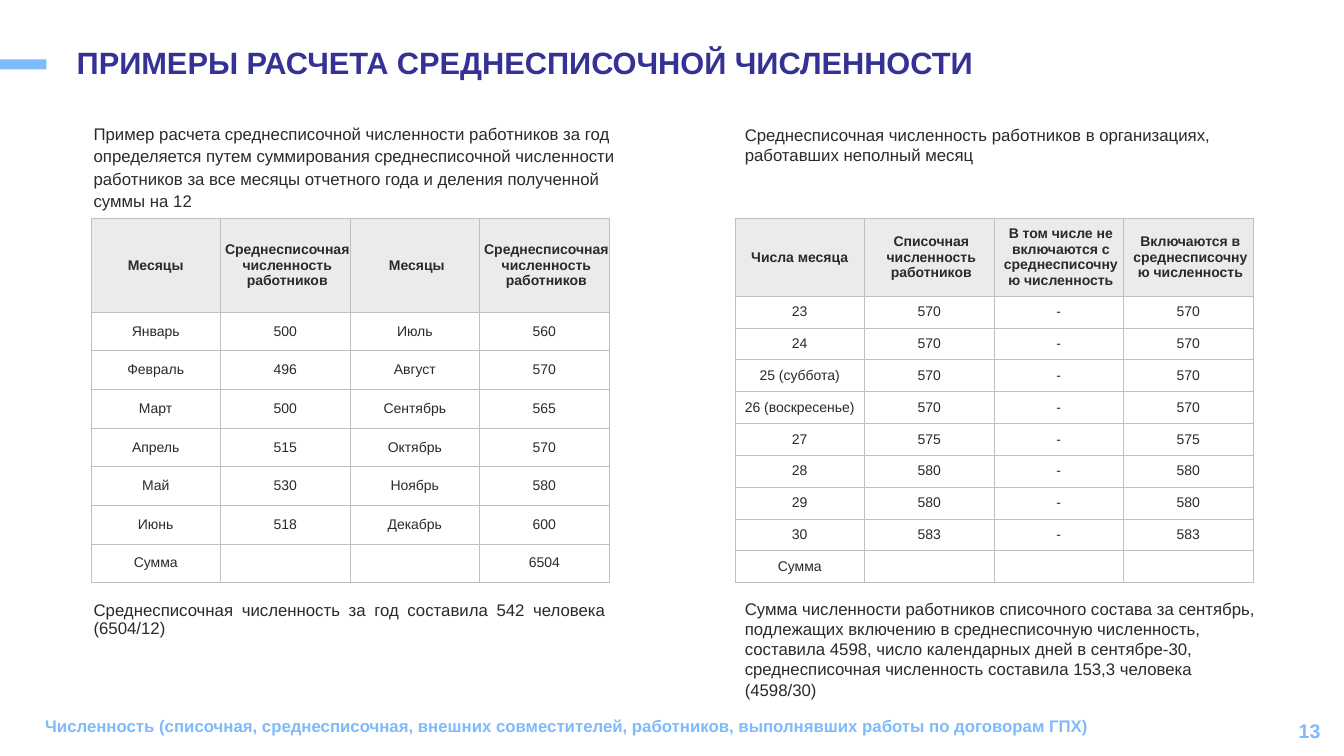
from lxml.etree import SubElement
from pptx import Presentation
from pptx.dml.color import RGBColor
from pptx.enum.shapes import MSO_SHAPE
from pptx.enum.text import MSO_ANCHOR, MSO_AUTO_SIZE, PP_ALIGN
from pptx.oxml.ns import qn
from pptx.util import Cm, Pt

COLORS = {"title": "363194", "accent": "7DBBFC", "text": "282A2E",
          "head": "EBEBEB", "body": "FFFFFF", "border": "BFBFBF"}

MONTHS = [
    ["Месяцы", "Среднесписочная численность работников"] * 2,
    ["Январь", "500", "Июль", "560"],
    ["Февраль", "496", "Август", "570"],
    ["Март", "500", "Сентябрь", "565"],
    ["Апрель", "515", "Октябрь", "570"],
    ["Май", "530", "Ноябрь", "580"],
    ["Июнь", "518", "Декабрь", "600"],
    ["Сумма", "", "", "6504"],
]
DAY_COUNTS = [("23", "570"), ("24", "570"), ("25 (суббота)", "570"),
              ("26 (воскресенье)", "570"), ("27", "575"), ("28", "580"),
              ("29", "580"), ("30", "583")]
DAYS = [
    ["Числа месяца", "Списочная численность работников",
     "В том числе не включаются с среднесписочную численность",
     "Включаются в среднесписочную численность"],
    *[[day, count, "-", count] for day, count in DAY_COUNTS],
    ["Сумма", "", "", ""],
]


def rgb(name):
    return RGBColor.from_string(COLORS[name])


def write(tf, text, size=12, color="text", bold=False, align=PP_ALIGN.LEFT,
          spacing=1.0, anchor=MSO_ANCHOR.TOP):
    tf.word_wrap = True
    tf.vertical_anchor = anchor
    p = tf.paragraphs[0]
    p.text = text
    p.alignment = align
    p.line_spacing = spacing
    for r in p.runs:
        r.font.name = "Arial"
        r.font.size = Pt(size)
        r.font.bold = bold
        r.font.color.rgb = rgb(color)


def add_text(s, box, text, **fmt):
    sp = s.shapes.add_textbox(*[Cm(v) for v in box])
    write(sp.text_frame, text, **fmt)


def set_borders(cell):
    tcPr = cell._tc.get_or_add_tcPr()
    for i, side in enumerate(("a:lnL", "a:lnR", "a:lnT", "a:lnB")):
        ln = tcPr.makeelement(qn(side), {"w": str(Pt(0.5))})
        fill = SubElement(ln, qn("a:solidFill"))
        SubElement(fill, qn("a:srgbClr"), val=COLORS["border"])
        tcPr.insert(i, ln)


def add_grid(s, box, rows, head_height):
    x, y, w, h = box
    cols = len(rows[0])
    table = s.shapes.add_table(len(rows), cols, Cm(x), Cm(y), Cm(w), Cm(h)).table
    table.first_row = table.horz_banding = False
    for col in table.columns:
        col.width = Cm(w / cols)
    row_height = (h - head_height) / (len(rows) - 1)
    for i, row in enumerate(rows):
        head = i == 0
        table.rows[i].height = Cm(head_height if head else row_height)
        for j, text in enumerate(row):
            cell = table.cell(i, j)
            cell.margin_top = cell.margin_bottom = 0
            cell.margin_left = Cm((0.1 if j else 0) if head else 0.2)
            cell.margin_right = Cm(0 if head else 0.2)
            cell.vertical_anchor = MSO_ANCHOR.MIDDLE
            cell.fill.solid()
            cell.fill.fore_color.rgb = rgb("head" if head else "body")
            set_borders(cell)
            write(cell.text_frame, text, size=10, bold=head,
                  align=PP_ALIGN.CENTER, anchor=None)


def add_header(s, box):
    x, y, w, h = box
    # Accent bar at the slide edge
    bar = s.shapes.add_shape(MSO_SHAPE.RECTANGLE, Cm(x), Cm(y + 0.41), Cm(1.17), Cm(0.25))
    bar.shadow.inherit = False
    bar.fill.solid()
    bar.fill.fore_color.rgb = rgb("accent")
    bar.line.fill.background()
    # Title
    title = s.shapes.title
    title.left, title.top = Cm(x + 1.68), Cm(y)
    title.width, title.height = Cm(w - 1.68), Cm(h)
    title.text_frame.auto_size = MSO_AUTO_SIZE.NONE
    write(title.text_frame, "ПРИМЕРЫ РАСЧЕТА СРЕДНЕСПИСОЧНОЙ ЧИСЛЕННОСТИ",
          size=22, color="title", bold=True, spacing=0.9)


def add_year_example(s, box):
    x, y, w, h = box
    add_text(s, (x, y, 14.1, 1.88),
             "Пример расчета среднесписочной численности работников за год "
             "определяется путем суммирования среднесписочной численности "
             "работников за все месяцы отчетного года и деления полученной\n"
             "суммы на 12", spacing=1.1)
    add_grid(s, (x + 0.18, y + 2.56, 13.06, 9.17), MONTHS, 2.35)
    add_text(s, (x, y + 12.09, w, h - 12.09),
             "Среднесписочная численность за год составила 542 человека (6504/12)",
             align=PP_ALIGN.JUSTIFY, spacing=0.9)


def add_month_example(s, box):
    x, y, w, h = box
    add_text(s, (x, y, 13.89, 2.49),
             "Среднесписочная численность работников в организациях,\n"
             "работавших неполный месяц")
    add_grid(s, (x, y + 2.49, 13.06, 9.17), DAYS, 1.95)
    add_text(s, (x, y + 11.94, w, h - 11.94),
             "Сумма численности работников списочного состава за сентябрь, "
             "подлежащих включению в среднесписочную численность, "
             "составила 4598, число календарных дней в сентябре-30, "
             "среднесписочная численность составила 153,3 человека (4598/30)")


def add_footer(s, box):
    x, y, w, h = box
    add_text(s, (x, y, 28.4, h),
             "Численность (списочная, среднесписочная, внешних совместителей, "
             "работников, выполнявших работы по договорам ГПХ)",
             color="accent", bold=True)
    add_text(s, (x + w - 7.62, y, 7.62, h), "13", size=14, color="accent",
             bold=True, align=PP_ALIGN.RIGHT, anchor=MSO_ANCHOR.MIDDLE)


def main():
    prs = Presentation()
    prs.slide_width, prs.slide_height = Cm(33.87), Cm(19.05)
    s = prs.slides.add_slide(prs.slide_layouts[5])
    add_header(s, (0, 1.09, 28.12, 1.45))
    add_year_example(s, (2.11, 2.95, 13.41, 13.74))
    add_month_example(s, (18.52, 3.02, 13.41, 14.12))
    add_footer(s, (0.89, 17.91, 32.64, 1.02))
    prs.save("out.pptx")


if __name__ == "__main__":
    main()
